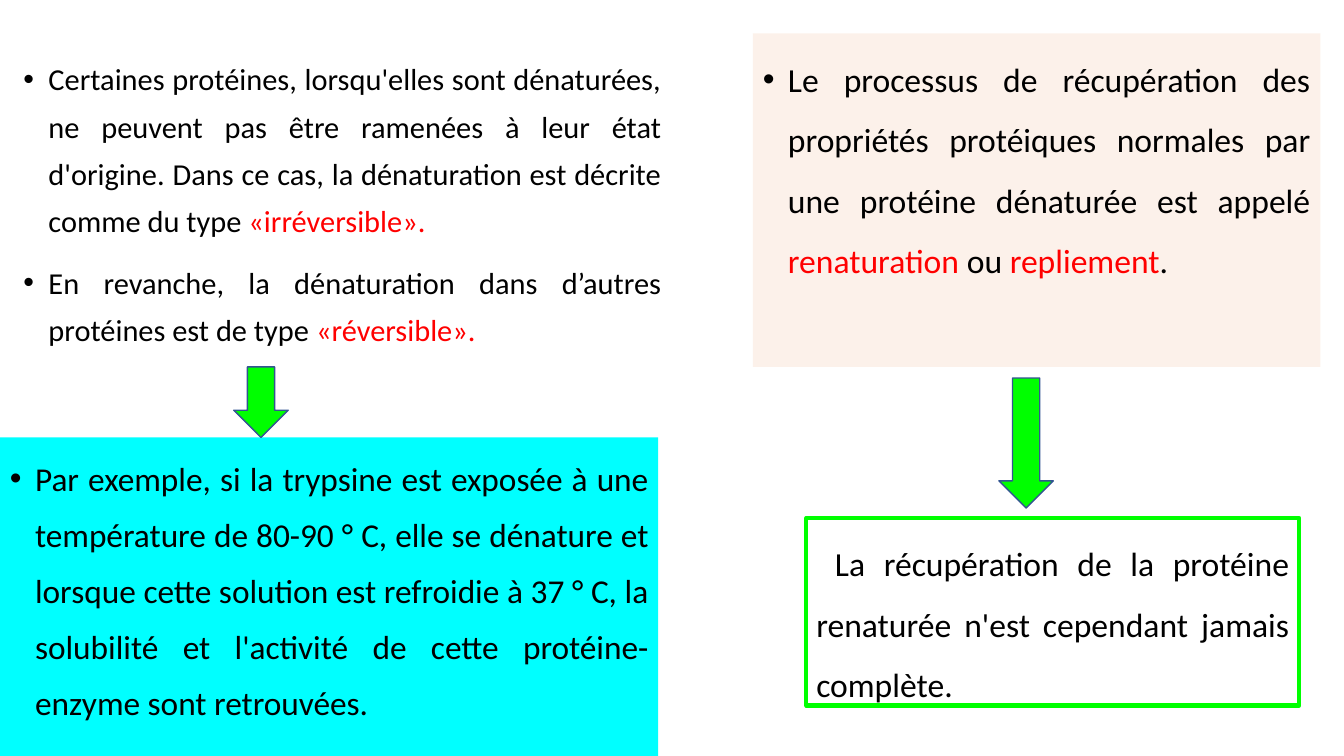
from pptx import Presentation
from pptx.dml.color import RGBColor
from pptx.enum.shapes import MSO_SHAPE
from pptx.enum.text import MSO_ANCHOR, MSO_AUTO_SIZE, PP_ALIGN
from pptx.oxml.ns import qn
from pptx.util import Pt
from lxml.etree import SubElement

COLORS = {
    "text": "000000",
    "accent": "FF0000",
    "example": "00FFFF",
    "process": "FBE5D6",
    "green": "00FF00",
    "arrow_line": "325491",
}
FONT = "Calibri"
BULLET_INDENT = Pt(18)
PANEL_HEIGHT = 238.3
ARROW_WIDTH = 38.9


def color(name):
    return RGBColor.from_string(COLORS[name])


def fill_shape(shape, name, opacity=100):
    shape.fill.solid()
    shape.fill.fore_color.rgb = color(name)
    if opacity < 100:
        color_element = shape.fill._xPr.find(qn("a:solidFill"))[0]
        SubElement(color_element, qn("a:alpha"), val=str(opacity * 1000))


def outline_shape(shape, name, width):
    shape.line.color.rgb = color(name)
    shape.line.width = Pt(width)


def place(shape, left, top, width, height):
    shape.left, shape.top = Pt(left), Pt(top)
    shape.width, shape.height = Pt(width), Pt(height)


def set_bullet(paragraph):
    properties = paragraph._p.get_or_add_pPr()
    properties.set("marL", str(BULLET_INDENT))
    properties.set("indent", str(-BULLET_INDENT))
    SubElement(properties, qn("a:buFont"), typeface="Arial")
    SubElement(properties, qn("a:buChar"), char="•")


def write_paragraphs(shape, paragraphs, size, spacing, bulleted=True):
    frame = shape.text_frame
    frame.word_wrap = True
    frame.auto_size = MSO_AUTO_SIZE.NONE
    frame.vertical_anchor = MSO_ANCHOR.TOP
    for index, runs in enumerate(paragraphs):
        paragraph = frame.add_paragraph() if index else frame.paragraphs[0]
        paragraph.alignment = PP_ALIGN.JUSTIFY
        paragraph.line_spacing = spacing
        paragraph.space_before = Pt(10 if bulleted else 0)
        if bulleted:
            set_bullet(paragraph)
        paragraph.font.name = FONT
        paragraph.font.size = Pt(size)
        for text, name in runs:
            run = paragraph.add_run()
            run.text = text
            run.font.color.rgb = color(name)


def add_panel(slide, left, top, width, height):
    return slide.shapes.add_textbox(Pt(left), Pt(top), Pt(width), Pt(height))


def add_down_arrow(slide, left, top, height):
    arrow = slide.shapes.add_shape(
        MSO_SHAPE.DOWN_ARROW, Pt(left), Pt(top), Pt(ARROW_WIDTH), Pt(height)
    )
    arrow.shadow.inherit = False
    fill_shape(arrow, "green")
    outline_shape(arrow, "arrow_line", 1)


def main():
    presentation = Presentation()
    presentation.slide_width = Pt(960)
    presentation.slide_height = Pt(540)
    slide = presentation.slides.add_slide(presentation.slide_layouts[1])
    title = slide.shapes.title._element
    title.getparent().remove(title)

    types = slide.placeholders[1]
    place(types, 9.4, 31.7, 470.2, PANEL_HEIGHT)
    write_paragraphs(types, [
        [("Certaines protéines, lorsqu'elles sont dénaturées, ne peuvent pas être "
          "ramenées à leur état d'origine. Dans ce cas, la dénaturation est décrite "
          "comme du type ", "text"), ("«irréversible». ", "accent")],
        [("En revanche, la dénaturation dans d’autres protéines est de type ", "text"),
         ("«réversible».", "accent")],
    ], 21.7, 1.3)

    example = add_panel(slide, 0, 312.5, 470.2, PANEL_HEIGHT)
    fill_shape(example, "example")
    write_paragraphs(example, [
        [("Par exemple, si la trypsine est exposée à une température de 80-90 ° C, "
          "elle se dénature et lorsque cette solution est refroidie à 37 ° C, la "
          "solubilité et l'activité de cette protéine-enzyme sont retrouvées.", "text")],
    ], 23.8, 1.4)
    add_down_arrow(slide, 167, 262.1, 50.4)

    process = add_panel(slide, 537.8, 23.8, 405.4, PANEL_HEIGHT)
    fill_shape(process, "process", opacity=50)
    write_paragraphs(process, [
        [("Le processus de récupération des propriétés protéiques normales par une "
          "protéine dénaturée est appelé ", "text"), ("renaturation ", "accent"),
         ("ou ", "text"), ("repliement", "accent"), (".", "text")],
    ], 24, 1.5)

    recovery = add_panel(slide, 576, 370.1, 352.1, 133.9)
    outline_shape(recovery, "green", 3)
    write_paragraphs(recovery, [
        [(" La récupération de la protéine renaturée n'est cependant jamais complète.",
          "text")],
    ], 24, 1.5, bulleted=False)
    add_down_arrow(slide, 713.5, 270, 92.9)

    presentation.save("out.pptx")


if __name__ == "__main__":
    main()
